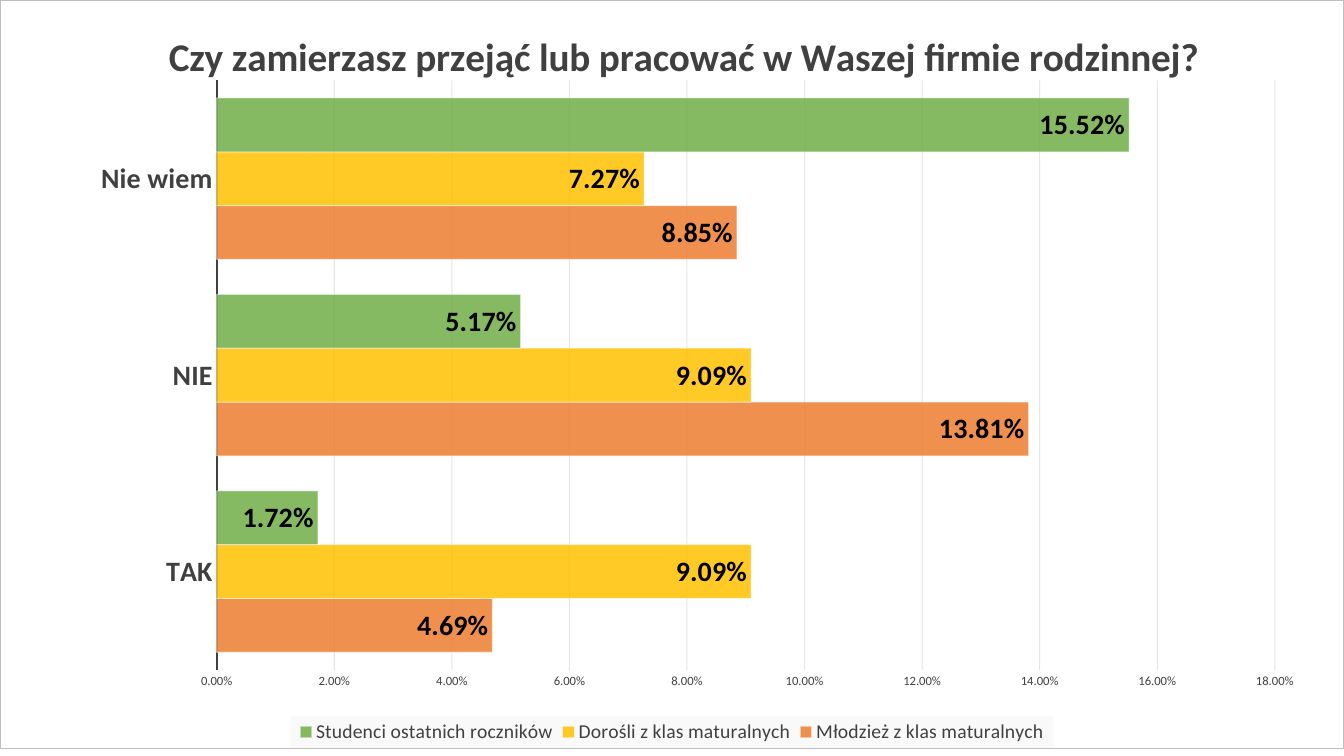
from lxml.etree import SubElement
from pptx import Presentation
from pptx.chart.data import CategoryChartData
from pptx.dml.color import RGBColor
from pptx.enum.chart import XL_CHART_TYPE, XL_LABEL_POSITION, XL_LEGEND_POSITION, XL_TICK_MARK
from pptx.oxml import parse_xml
from pptx.oxml.ns import nsdecls, qn
from pptx.util import Pt

FONT = "Calibri"
DARK = "404040"
TITLE = "Czy zamierzasz przejąć lub pracować w Waszej firmie rodzinnej?"
ANSWERS = ["TAK", "NIE", "Nie wiem"]
GROUPS = [
    ("Młodzież z klas maturalnych", "ED7D31", (0.0469, 0.1381, 0.0885)),
    ("Dorośli z klas maturalnych", "FFC000", (0.0909, 0.0909, 0.0727)),
    ("Studenci ostatnich roczników", "70AD47", (0.0172, 0.0517, 0.1552)),
]


def color(value):
    """Turn a hex string into a colour."""
    return RGBColor.from_string(value)


def style_font(font, size, value, bold=False):
    """Set face, size, colour and weight of a font."""
    font.name, font.size, font.bold = FONT, Pt(size), bold
    font.color.rgb = color(value)


def style_fill(fill, value, opacity=100):
    """Apply a solid fill with the opacity in percent."""
    fill.solid()
    fill.fore_color.rgb = color(value)
    if opacity < 100:
        solid = fill._xPr.find(qn("a:solidFill"))
        SubElement(solid[0], qn("a:alpha"), val=str(opacity * 1000))


def style_line(line, value, width, opacity=100):
    """Apply a solid line with the opacity in percent."""
    line.width = Pt(width)
    style_fill(line.fill, value, opacity)


def layout_xml(x, y, width=None, height=None, inner=False):
    """Build a manual layout in fractions of the chart area."""
    parts = [("layoutTarget", "inner")] if inner else []
    parts += [("xMode", "edge"), ("yMode", "edge"), ("x", x), ("y", y)]
    if width:
        parts += [("w", width), ("h", height)]
    body = "".join(f'<c:{name} val="{value}"/>' for name, value in parts)
    return parse_xml(f'<c:layout {nsdecls("c")}><c:manualLayout>{body}</c:manualLayout></c:layout>')


def place(element, layout, before):
    """Put a layout in front of the first child with one of the given tags."""
    for old in element.findall(qn("c:layout")):
        element.remove(old)
    next(child for child in element if child.tag in map(qn, before)).addprevious(layout)


def add_shape_properties(element, fill, border, before=()):
    """Add fill and border properties, each given as XML, to a chart part."""
    properties = parse_xml(f'<c:spPr {nsdecls("c", "a")}>{fill}{border}</c:spPr>')
    follower = next((child for child in element if child.tag in map(qn, before)), None)
    if follower is None:
        element.append(properties)
    else:
        follower.addprevious(properties)


def format_title(chart):
    """Write the question above the bars."""
    chart.has_title = True
    paragraph = chart.chart_title.text_frame.paragraphs[0]
    paragraph.text = TITLE
    style_font(paragraph.font, 28, DARK, True)
    chart.chart_title.include_in_layout = False
    place(chart.chart_title._element, layout_xml(0.12, 0.03), ["c:overlay"])


def format_axes(chart):
    """Style the answers, the percent scale and its gridlines."""
    answers, scale = chart.category_axis, chart.value_axis
    for axis, size, bold in ((answers, 20, True), (scale, 9, False)):
        axis.major_tick_mark = axis.minor_tick_mark = XL_TICK_MARK.NONE
        style_font(axis.tick_labels.font, size, DARK, bold)
    style_line(answers.format.line, DARK, 1.5)
    scale.format.line.fill.background()
    scale.minimum_scale, scale.maximum_scale, scale.major_unit = 0, 0.18, 0.02
    scale.tick_labels.number_format = "0.00%"
    scale.tick_labels.number_format_is_linked = False
    style_line(scale.major_gridlines.format.line, "0D0D0D", 0.75, 10)


def format_bars(plot):
    """Colour and label the bars of each group."""
    plot.gap_width, plot.overlap, plot.vary_by_categories = 65, 0, False
    for series, (_, value, _) in zip(plot.series, GROUPS):
        series.invert_if_negative = False
        style_fill(series.format.fill, value, 85)
        style_line(series.format.line, "FFFFFF", 0.75, 50)
        labels = series.data_labels
        labels.show_value, labels.position = True, XL_LABEL_POSITION.INSIDE_END
        labels.number_format, labels.number_format_is_linked = "0.00%", False
        style_font(labels.font, 20, "000000", True)


def format_legend(chart):
    """Set the legend on a pale band below the scale."""
    chart.has_legend = True
    legend = chart.legend
    legend.position, legend.include_in_layout = XL_LEGEND_POSITION.BOTTOM, False
    style_font(legend.font, 14, DARK)
    place(legend._element, layout_xml(0.216, 0.957, 0.568, 0.042), ["c:overlay"])
    fill = '<a:solidFill><a:srgbClr val="F9F9F9"/></a:solidFill>'
    add_shape_properties(legend._element, fill, "<a:ln><a:noFill/></a:ln>", ["c:txPr"])


def add_survey_chart(slide, left, top, width, height):
    """Draw the survey chart in the given box."""
    data = CategoryChartData(number_format="0.00%")
    data.categories = ANSWERS
    for name, _, values in GROUPS:
        data.add_series(name, values)
    box = map(Pt, (left, top, width, height))
    chart = slide.shapes.add_chart(XL_CHART_TYPE.BAR_CLUSTERED, *box, data).chart
    style_font(chart.font, 10, "000000")
    format_title(chart)
    format_axes(chart)
    format_bars(chart.plots[0])
    format_legend(chart)
    plot_area = chart._chartSpace.chart.plotArea
    place(plot_area, layout_xml(0.161, 0.107, 0.788, 0.788, True), ["c:barChart"])
    fill = '<a:solidFill><a:srgbClr val="FFFFFF"/></a:solidFill>'
    border = '<a:ln w="9525"><a:solidFill><a:srgbClr val="BFBFBF"/></a:solidFill></a:ln>'
    add_shape_properties(chart._chartSpace, fill, border, ["c:txPr"])


def main():
    """Build and save the slide."""
    presentation = Presentation()
    presentation.slide_width, presentation.slide_height = Pt(960), Pt(540)
    slide = presentation.slides.add_slide(presentation.slide_layouts[6])
    add_survey_chart(slide, 0, 0, 960, 535)
    presentation.save("out.pptx")


if __name__ == "__main__":
    main()
